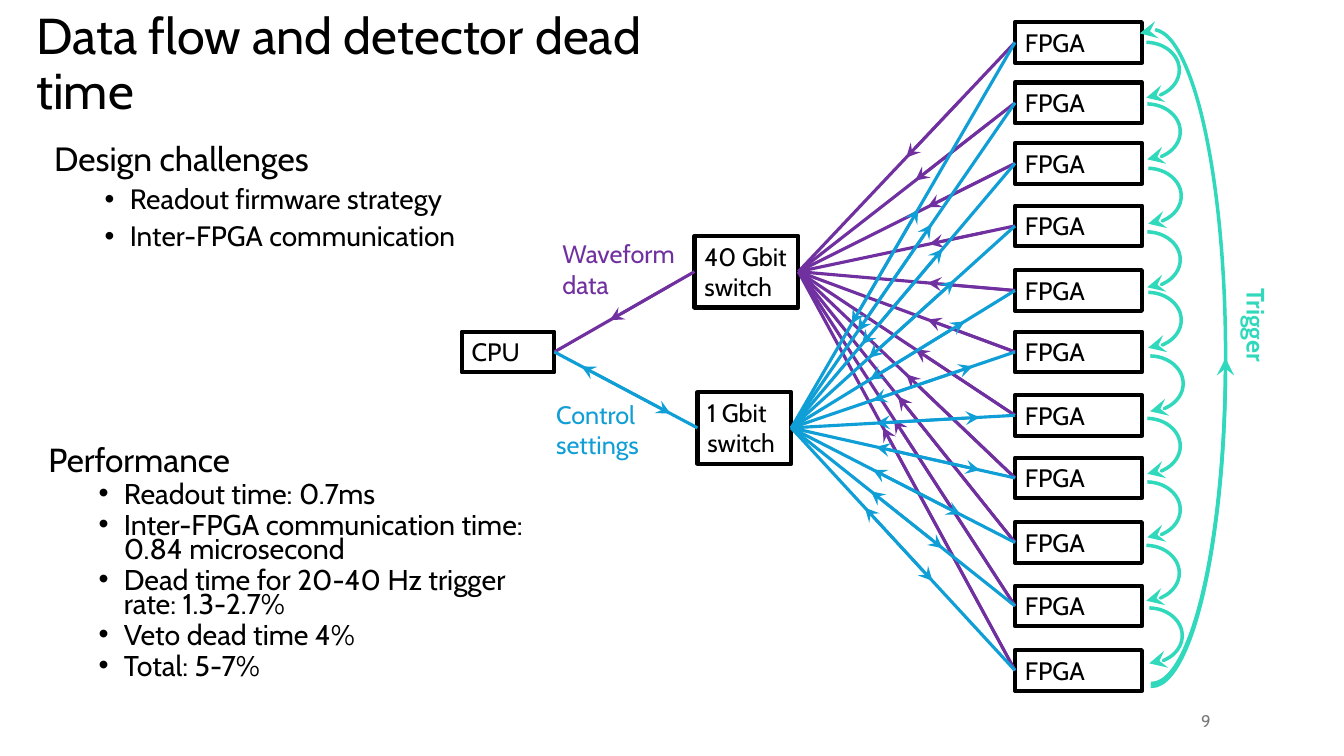
from dataclasses import dataclass

from lxml.etree import SubElement
from pptx import Presentation
from pptx.dml.color import RGBColor
from pptx.enum.shapes import MSO_CONNECTOR, MSO_SHAPE
from pptx.enum.text import MSO_ANCHOR, MSO_AUTO_SIZE, PP_ALIGN
from pptx.oxml.ns import qn
from pptx.util import Pt


@dataclass(frozen=True)
class Theme:
    font: str = "Cabin"
    ink: str = "000000"
    page: str = "797979"
    waveform: str = "7030A0"
    control: str = "0F9ED5"
    trigger: str = "30D8BC"
    title_size: float = 36
    label_size: float = 18
    page_size: float = 12


THEME = Theme()
TOP, LEFT, BOTTOM, RIGHT = range(4)

# Board tops, and per board the x positions where each link's arrows sit
FPGA_LEFT = 725
FPGA_TOPS = [15.8, 59, 102.2, 146.9, 193, 236.9, 282.2, 326.9, 373, 418.3, 464.4]
WAVEFORM_SPANS = [(647.3, 686.9), (653.8, 706.3), (662.4, 711.4), (663.8, 702)] + [
    (tip, FPGA_LEFT) for tip in (662.4, 662.4, 653.8, 647.3, 641.5, 638.6, 630.7)]
CONTROL_SPANS = [(608.4, 655.9), (612.7, 665.3), (615.6, 673.2), (620.6, 681.8),
                 (621.4, 689), (623.5, 694.8), (625.7, 699.8), (625.7, 699.8),
                 (623.5, 686.2), (622.1, 673.2), (617.8, 666)]
HOPS = [(794.2, 30.2), (794.9, 74.2), (795.6, 120.2), (794.9, 165.6), (795.6, 208.8),
        (797, 254.2), (794.9, 298.8), (794.9, 344.2), (794.2, 389.5), (796.3, 434.2)]


def style_runs(paragraph, size, color=THEME.ink, bold=None):
    for run in paragraph.runs:
        run.font.name = THEME.font
        run.font.size = Pt(size)
        run.font.bold = bold
        run.font.color.rgb = RGBColor.from_string(color)


def add_heads(line_owner, *ends):
    line = line_owner.line._get_or_add_ln()
    for end in ends:
        SubElement(line, qn(f"a:{end}"), type="stealth", w="lg", len="lg")


def add_box(slide, text, left, top, width, height):
    box = slide.shapes.add_shape(MSO_SHAPE.RECTANGLE, Pt(left), Pt(top), Pt(width), Pt(height))
    box.shadow.inherit = False
    box.fill.background()
    box.line.color.rgb = RGBColor.from_string(THEME.ink)
    box.line.width = Pt(3)
    frame = box.text_frame
    frame.text = text
    frame.word_wrap = True
    frame.vertical_anchor = MSO_ANCHOR.TOP
    frame.paragraphs[0].alignment = PP_ALIGN.LEFT
    style_runs(frame.paragraphs[0], THEME.label_size)
    return box


def add_line(slide, start, end, color, width):
    line = slide.shapes.add_connector(MSO_CONNECTOR.STRAIGHT, *start, *end)
    line.line.color.rgb = RGBColor.from_string(color)
    line.line.width = Pt(width)
    SubElement(line._element.spPr, qn("a:effectLst"))
    return line


def add_link(slide, source, target, color, span, ends):
    """Join two boxes and put arrowheads part of the way along the link."""
    link = add_line(slide, (0, 0), (0, 0), color, 2.25)
    link.begin_connect(source, RIGHT)
    link.end_connect(target, LEFT)
    slope = (link.end_y - link.begin_y) / (link.end_x - link.begin_x)
    start, end = [(Pt(x), round(link.begin_y + slope * (Pt(x) - link.begin_x))) for x in span]
    add_heads(add_line(slide, start, end, color, 0), *ends)


def add_arc(slide, left, top, width, height, angles, end):
    arc = slide.shapes.add_shape(MSO_SHAPE.ARC, Pt(left), Pt(top), Pt(width), Pt(height))
    arc.shadow.inherit = False
    arc.fill.background()
    arc.line.color.rgb = RGBColor.from_string(THEME.trigger)
    arc.line.width = Pt(2.5)
    arc.adjustments[0], arc.adjustments[1] = angles
    if end:
        add_heads(arc, end)


def add_label(slide, text, left, top, width, height, color, size=THEME.label_size, bold=None):
    label = slide.shapes.add_textbox(Pt(left), Pt(top), Pt(width), Pt(height))
    label.text_frame.text = text
    label.text_frame.word_wrap = True
    style_runs(label.text_frame.paragraphs[0], size, color, bold)
    return label


def add_bullets(slide, heading, points, left, top, height, sizes, spacing):
    label = add_label(slide, heading, left, top, 360, height, THEME.ink, sizes[0])
    frame = label.text_frame
    frame.paragraphs[0].line_spacing = spacing
    for point in points:
        paragraph = frame.add_paragraph()
        paragraph.text = point
        paragraph.level = 1
        paragraph.line_spacing = spacing
        paragraph.space_before = Pt(5)
        properties = paragraph._p.get_or_add_pPr()
        properties.set("marL", str(Pt(54)))
        properties.set("indent", str(Pt(-18)))
        SubElement(properties, qn("a:buFont"), typeface="Arial")
        SubElement(properties, qn("a:buChar"), char="•")
        style_runs(paragraph, sizes[1])


def add_title(slide, text):
    title = slide.shapes.title
    title.left, title.top, title.width, title.height = Pt(18.7), Pt(5.8), Pt(523.4), Pt(82.1)
    frame = title.text_frame
    frame.text = text
    frame.word_wrap = True
    frame.auto_size = MSO_AUTO_SIZE.NONE
    frame.vertical_anchor = MSO_ANCHOR.MIDDLE
    frame.paragraphs[0].alignment = PP_ALIGN.LEFT
    frame.paragraphs[0].line_spacing = 0.9
    style_runs(frame.paragraphs[0], THEME.title_size)


def main():
    deck = Presentation()
    deck.slide_width, deck.slide_height = Pt(960), Pt(540)
    slide = deck.slides.add_slide(deck.slide_layouts[5])
    add_title(slide, "Data flow and detector dead time")

    # Computer, switches and boards
    cpu = add_box(slide, "CPU", 329.8, 236.9, 66.2, 29)
    control_switch = add_box(slide, "1 Gbit switch", 498.2, 280.1, 67, 51.1)
    waveform_switch = add_box(slide, "40 Gbit switch", 496.1, 168.5, 74.2, 51.1)
    fpgas = [add_box(slide, "FPGA", FPGA_LEFT, top, 90.7, 29) for top in FPGA_TOPS]

    # Waveform data runs one way, control settings both ways
    for switch, color, cpu_span, spans, ends in (
        (waveform_switch, THEME.waveform, (435.6, 478.8), WAVEFORM_SPANS, ["headEnd"]),
        (control_switch, THEME.control, (415.4, 478.8), CONTROL_SPANS, ["headEnd", "tailEnd"]),
    ):
        for fpga, span in zip(fpgas, spans):
            add_link(slide, switch, fpga, color, span, ends)
        add_link(slide, cpu, switch, color, cpu_span, ends)

    # Trigger hops from board to board, then the return loop
    for left, top in HOPS:
        add_arc(slide, left, top, 48.2, 39.6, (163.04, 53.13), "tailEnd")
    for top, start in ((20.9, 160.75), (23, 215.46)):
        add_arc(slide, 769.7, top, 105.8, 467.3, (start, 54.08), "headEnd")

    # Labels
    add_label(slide, "Waveform data", 394.6, 167, 101.5, 51.1, THEME.waveform)
    add_label(slide, "Control settings", 390.2, 281.5, 101.5, 51.1, THEME.control)
    trigger = add_label(slide, "Trigger", 856.8, 225.4, 81.4, 28.8, THEME.trigger, bold=True)
    trigger.rotation = 90

    # Lists
    add_bullets(slide, "Design challenges",
                ["Readout firmware strategy", "Inter-FPGA communication"],
                31.7, 97.9, 101.5, (24, 20), 0.9)
    add_bullets(slide, "Performance",
                ["Readout time: 0.7ms",
                 "Inter-FPGA communication time: 0.84 microsecond",
                 "Dead time for 20-40 Hz trigger rate: 1.3-2.7%",
                 "Veto dead time 4%",
                 "Total: 5-7%"],
                27.4, 318.2, 182.9, (23.8, 20.4), 0.7)

    # Slide number
    page = add_label(slide, "9", 655.9, 500.4, 216, 28.8, THEME.page, THEME.page_size)
    page.text_frame.vertical_anchor = MSO_ANCHOR.MIDDLE
    page.text_frame.paragraphs[0].alignment = PP_ALIGN.RIGHT

    deck.save("out.pptx")


if __name__ == "__main__":
    main()
